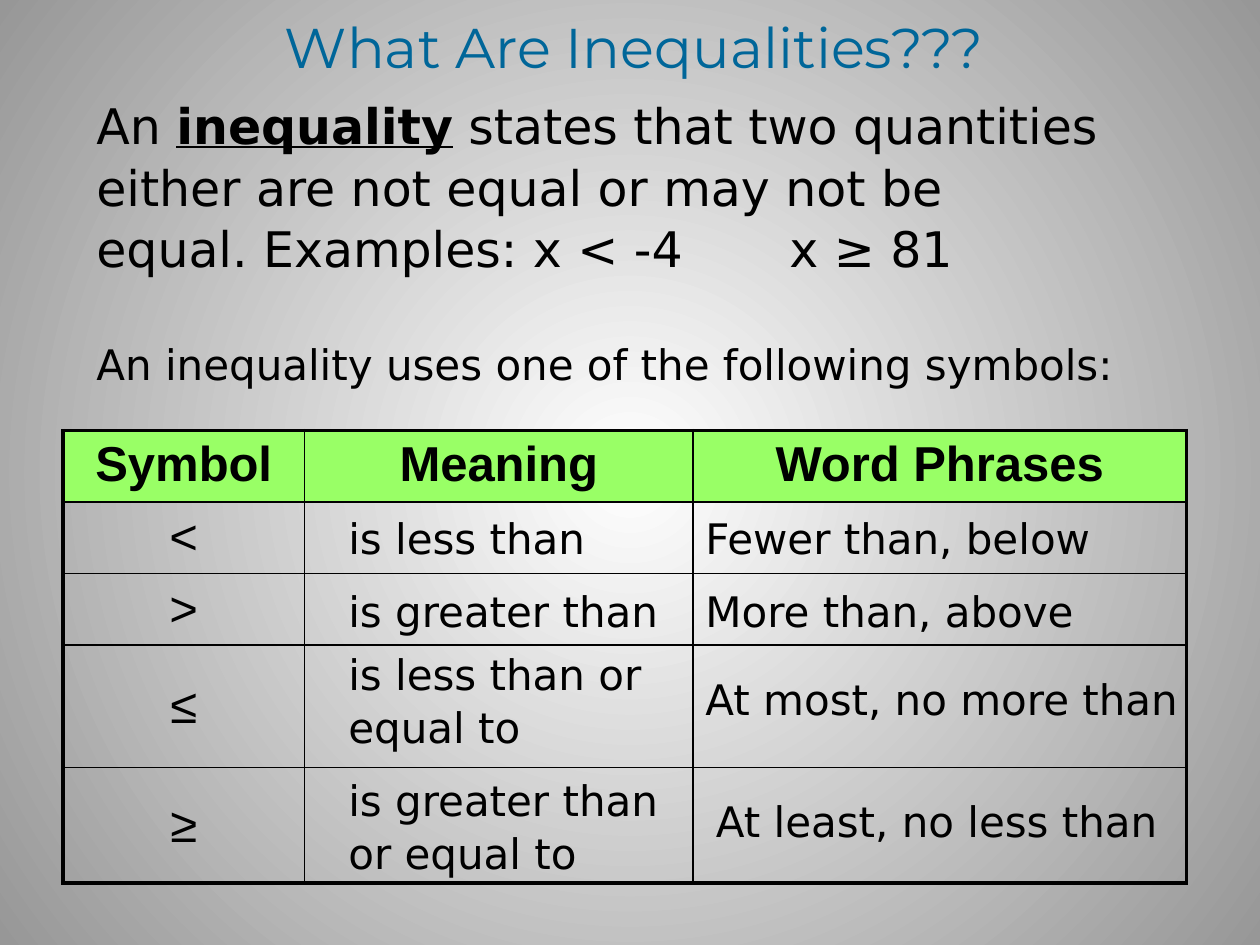
from dataclasses import dataclass

from pptx import Presentation
from pptx import util as u
from pptx.dml import color
from pptx.enum import text
from pptx.oxml import ns, parse_xml


@dataclass(frozen=True)
class Theme:
    """Colours, fonts and type sizes of the slide."""
    ink: str = "000000"
    title: str = "006699"
    header: str = "99FF66"
    centre: str = "FFFFFF"
    edge: str = "979797"
    title_font: str = "Montserrat"
    body_font: str = "DejaVu Sans"
    table_font: str = "Arial"
    title_size: float = 32
    large: float = 28
    small: float = 24
    thick: float = 2.25
    thin: float = 1


THEME = Theme()
HEADINGS = ["Symbol", "Meaning", "Word Phrases"]
SYMBOLS = ["<", ">", "≤", "≥"]
COLUMNS = [138, 222, 282]
ROWS = [40.6, 40.6, 40.6, 70, 66]
MEANINGS = [
    ("is less than", (192, 288, 210, 36)),
    ("is greater than", (192, 330, 210, 36)),
    ("is less than or equal to", (192, 366, 210, 65)),
    ("is greater than or equal to", (192, 438, 210, 65)),
]
PHRASES = [
    ("Fewer than, below", (396, 288, 240, 36)),
    ("More than, above", (396, 330, 240, 36)),
    ("At most, no more than", (396, 380, 348, 36)),
    ("At least, no less than", (402, 450, 324, 36)),
]


def style(span, font, size, ink=THEME.ink, bold=False):
    """Give a run its font, size, colour and weight."""
    span.font.name = font
    span.font.size = u.Pt(size)
    span.font.bold = bold
    span.font.color.rgb = color.RGBColor.from_string(ink)


def add_background(page):
    """Fill the page with a gradient that spreads from its centre."""
    fill = page.background.fill
    fill.gradient()
    for stop, shade in zip(fill.gradient_stops, (THEME.centre, THEME.edge)):
        stop.color.rgb = color.RGBColor.from_string(shade)
    gradient = page.element.find(".//" + ns.qn("a:gradFill"))
    linear = gradient.find(ns.qn("a:lin"))
    gradient.replace(linear, parse_xml(
        f'<a:path {ns.nsdecls("a")} path="circle">'
        '<a:fillToRect l="50000" t="50000" r="50000" b="50000"/></a:path>'))


def add_frame(page, box):
    """Add a wrapping text box and return its text frame."""
    frame = page.shapes.add_textbox(*map(u.Pt, box)).text_frame
    frame.word_wrap = True
    return frame


def add_title(page, box):
    """Place the centred title."""
    frame = add_frame(page, box)
    frame.vertical_anchor = text.MSO_ANCHOR.MIDDLE
    frame.text = "What Are Inequalities???"
    para = frame.paragraphs[0]
    para.alignment = text.PP_ALIGN.CENTER
    style(para.runs[0], THEME.title_font, THEME.title_size, THEME.title)


def add_definition(page, box):
    """Place the definition with its key term, examples and lead-in."""
    frame = add_frame(page, box)
    lines = [
        ["An ", "inequality", " states that two quantities"],
        ["either are not equal or may not be"],
        ["equal. Examples: x < -4\t\tx ≥ 81"],
        ["An inequality uses one of the following symbols:"],
    ]
    for index, parts in enumerate(lines):
        para = frame.add_paragraph() if index else frame.paragraphs[0]
        para.line_spacing = 1.04
        size = THEME.small if index == len(lines) - 1 else THEME.large
        for part in parts:
            span = para.add_run()
            span.text = part
            style(span, THEME.body_font, size)
    para.space_before = u.Pt(34)
    term = frame.paragraphs[0].runs[1]
    term.font.bold = term.font.underline = True


def add_borders(cell, widths):
    """Draw the four cell borders, given by side letter and width."""
    properties = cell._tc.get_or_add_tcPr()
    for side, width in widths.items():
        properties.append(parse_xml(
            f'<a:ln{side} {ns.nsdecls("a")} w="{u.Pt(width)}"><a:solidFill>'
            f'<a:srgbClr val="{THEME.ink}"/></a:solidFill></a:ln{side}>'))


def fill_cell(cell, words, is_header):
    """Set the fill and centred wording of one cell."""
    if is_header:
        cell.fill.solid()
        cell.fill.fore_color.rgb = color.RGBColor.from_string(THEME.header)
    else:
        cell.fill.background()
        cell.vertical_anchor = text.MSO_ANCHOR.MIDDLE
    cell.text = words
    para = cell.text_frame.paragraphs[0]
    para.alignment = text.PP_ALIGN.CENTER
    for span in para.runs:
        style(span, THEME.table_font, THEME.large, bold=is_header)


def add_symbol_table(page, box):
    """Place the grid with its headings and symbols inside a thick outline."""
    table = page.shapes.add_table(len(ROWS), len(COLUMNS), *map(u.Pt, box)).table
    table.horz_banding = table.first_row = False
    for column, width in zip(table.columns, COLUMNS):
        column.width = u.Pt(width)
    for row, height in zip(table.rows, ROWS):
        row.height = u.Pt(height)
    content = [HEADINGS] + [[symbol, "", ""] for symbol in SYMBOLS]
    for i, words in enumerate(content):
        for j, word in enumerate(words):
            outer = {"L": j == 0, "R": j == len(COLUMNS) - 1,
                     "T": i == 0, "B": i == len(ROWS) - 1}
            cell = table.cell(i, j)
            add_borders(cell, {side: THEME.thick if edge else THEME.thin
                               for side, edge in outer.items()})
            fill_cell(cell, word, i == 0)


def add_label(page, words, box):
    """Place one meaning or phrase over the table."""
    frame = add_frame(page, box)
    frame.text = words
    para = frame.paragraphs[0]
    para.line_spacing = 1.04
    style(para.runs[0], THEME.body_font, THEME.small)


def main():
    """Build the slide and save the deck."""
    deck = Presentation()
    deck.slide_width, deck.slide_height = u.Pt(720), u.Pt(540)
    page = deck.slides.add_slide(deck.slide_layouts[6])
    add_background(page)
    add_definition(page, (48, 50, 624, 172))
    add_symbol_table(page, (36, 246, sum(COLUMNS), sum(ROWS)))
    for words, box in MEANINGS + PHRASES:
        add_label(page, words, box)
    add_title(page, (5, 3.6, 715, 46))
    deck.save("out.pptx")


if __name__ == "__main__":
    main()
